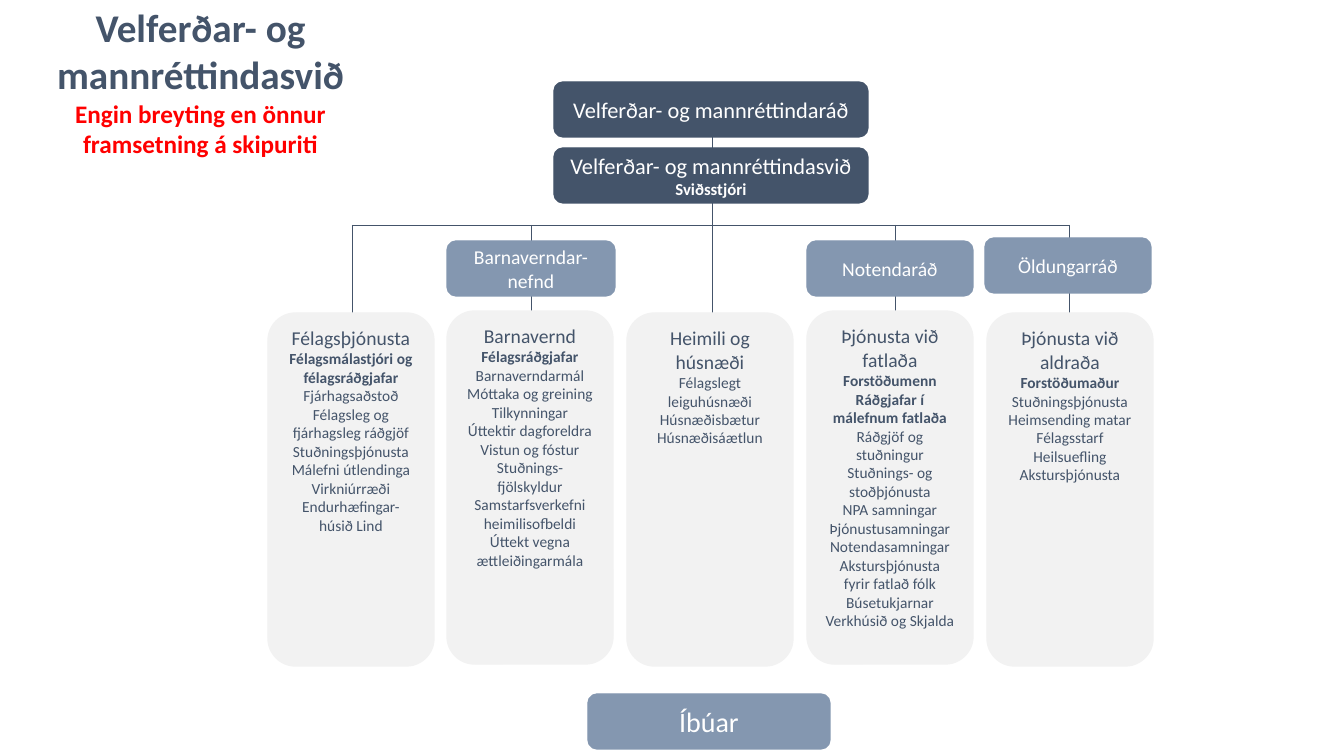
"""Builds the organisation chart slide of the welfare and human rights division."""
from lxml.etree import SubElement
from pptx import Presentation
from pptx.dml.color import RGBColor
from pptx.enum.shapes import MSO_CONNECTOR, MSO_SHAPE
from pptx.enum.text import MSO_ANCHOR, MSO_AUTO_SIZE, PP_ALIGN
from pptx.oxml.ns import qn
from pptx.util import Pt

PX = 914400 / 100.8
NAVY, STEEL, PALE, WHITE, RED = "44546A", "8497B0", "F2F2F2", "FFFFFF", "FF0000"


def rgb(value):
    return RGBColor.from_string(value)


def fill_box(box, bounds, fill, anchor, lines):
    box.left, box.top, box.width, box.height = [round(n * PX) for n in bounds]
    box.fill.solid()
    box.fill.fore_color.rgb = rgb(fill)
    frame = box.text_frame
    frame.word_wrap = True
    frame.auto_size = MSO_AUTO_SIZE.NONE
    frame.vertical_anchor = anchor
    for number, (text, size, bold, color) in enumerate(lines):
        paragraph = frame.add_paragraph() if number else frame.paragraphs[0]
        paragraph.alignment = PP_ALIGN.CENTER
        run = paragraph.add_run()
        run.text = text
        run.font.name = "Calibri"
        run.font.size = Pt(size)
        run.font.bold = bold
        run.font.color.rgb = rgb(color)


prs = Presentation()
prs.slide_width, prs.slide_height = round(1344 * PX), round(756 * PX)
slide = prs.slides.add_slide(prs.slide_layouts[5])

heading = slide.shapes.title
fill_box(heading, (26, 32, 349, 140), WHITE, MSO_ANCHOR.MIDDLE, [
    ("Velferðar- og mannréttindasvið", 28, True, NAVY),
    ("Engin breyting en önnur framsetning á skipuriti", 18, True, RED),
])
heading.text_frame.margin_top = round(5 * PX)
heading.text_frame.margin_bottom = round(47 * PX)

BRANCH_Y = 225
departments = [
    (313, "Félagsþjónusta", ["Félagsmálastjóri og félagsráðgjafar"],
     ["Fjárhagsaðstoð", "Félagsleg og fjárhagsleg ráðgjöf", "Stuðningsþjónusta",
      "Málefni útlendinga", "Virkniúrræði", "Endurhæfingar-húsið Lind"]),
    (311, "Barnavernd", ["Félagsráðgjafar"],
     ["Barnaverndarmál", "Móttaka og greining", "Tilkynningar", "Úttektir dagforeldra",
      "Vistun og fóstur", "Stuðnings-fjölskyldur", "Samstarfsverkefni heimilisofbeldi",
      "Úttekt vegna ættleiðingarmála"]),
    (313, "Heimili og húsnæði", [],
     ["Félagslegt leiguhúsnæði", "Húsnæðisbætur", "Húsnæðisáætlun"]),
    (311, "Þjónusta við fatlaða", ["Forstöðumenn", "Ráðgjafar í málefnum fatlaða"],
     ["Ráðgjöf og stuðningur", "Stuðnings- og stoðþjónusta", "NPA samningar",
      "Þjónustusamningar", "Notendasamningar", "Akstursþjónusta fyrir fatlað fólk",
      "Búsetukjarnar", "Verkhúsið og Skjalda"]),
    (313, "Þjónusta við aldraða", ["Forstöðumaður"],
     ["Stuðningsþjónusta", "Heimsending matar", "Félagsstarf", "Heilsuefling",
      "Akstursþjónusta"]),
]

branches = [(352, BRANCH_Y, 1069, BRANCH_Y), (712, 97, 712, 313)]
branches += [(x, BRANCH_Y, x, 313) for x in (352, 531, 895, 1069)]
for ends in branches:
    branch = slide.shapes.add_connector(
        MSO_CONNECTOR.STRAIGHT, *[round(n * PX) for n in ends])
    branch.line.color.rgb = rgb(NAVY)
    branch.line.width = Pt(0.5)
    SubElement(branch._element.spPr, qn("a:effectLst"))

boxes = []
for index, (top, name, staff, services) in enumerate(departments):
    lines = [(name, 14, False, NAVY)]
    lines += [(role, 11, True, NAVY) for role in staff]
    lines += [(service, 11, False, NAVY) for service in services]
    boxes.append(((268 + 719 * index // 4, top, 166, 353), PALE, MSO_ANCHOR.TOP, lines))

COUNCIL = "Velferðar- og mannréttindaráð"
DIVISION = "Velferðar- og mannréttindasvið"
for bounds, fill, lines in [
    ((554, 82, 314, 55), NAVY, [(COUNCIL, 16, False, WHITE)]),
    ((554, 148, 314, 55), NAVY,
     [(DIVISION, 16, False, WHITE), ("Sviðsstjóri", 12, True, WHITE)]),
    ((447, 241, 168, 55), STEEL, [("Barnaverndar-nefnd", 14, False, WHITE)]),
    ((807, 241, 166, 55), STEEL, [("Notendaráð", 14, False, WHITE)]),
    ((985, 238, 166, 55), STEEL, [("Öldungarráð", 14, False, WHITE)]),
    ((588, 694, 242, 55), STEEL, [("Íbúar", 20, False, WHITE)]),
]:
    boxes.append((bounds, fill, MSO_ANCHOR.MIDDLE, lines))

for bounds, fill, anchor, lines in boxes:
    unit = slide.shapes.add_shape(
        MSO_SHAPE.ROUNDED_RECTANGLE, *[round(n * PX) for n in bounds])
    unit.shadow.inherit = False
    unit.line.color.rgb = rgb(fill)
    unit.line.width = Pt(1)
    fill_box(unit, bounds, fill, anchor, lines)

prs.save("out.pptx")
